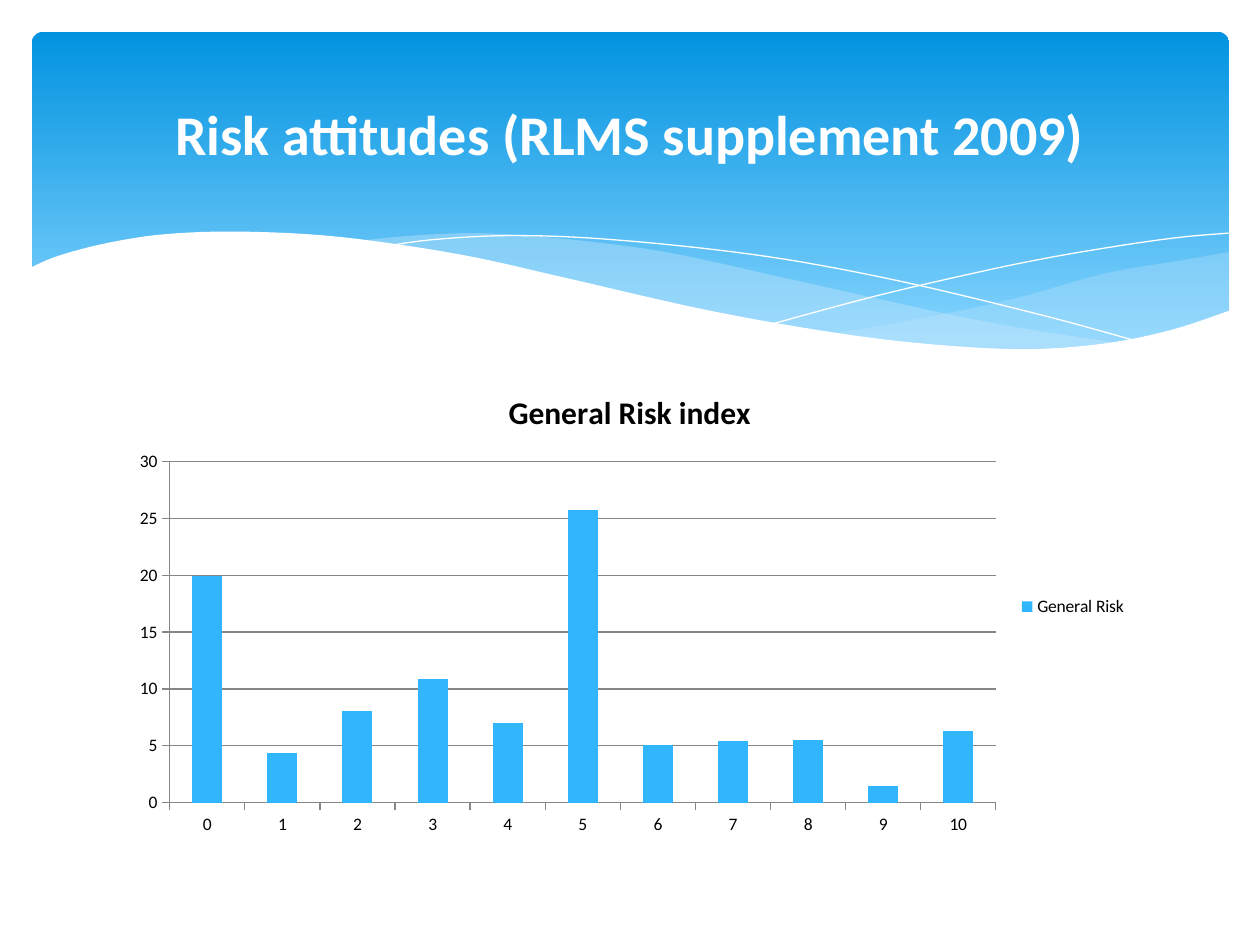
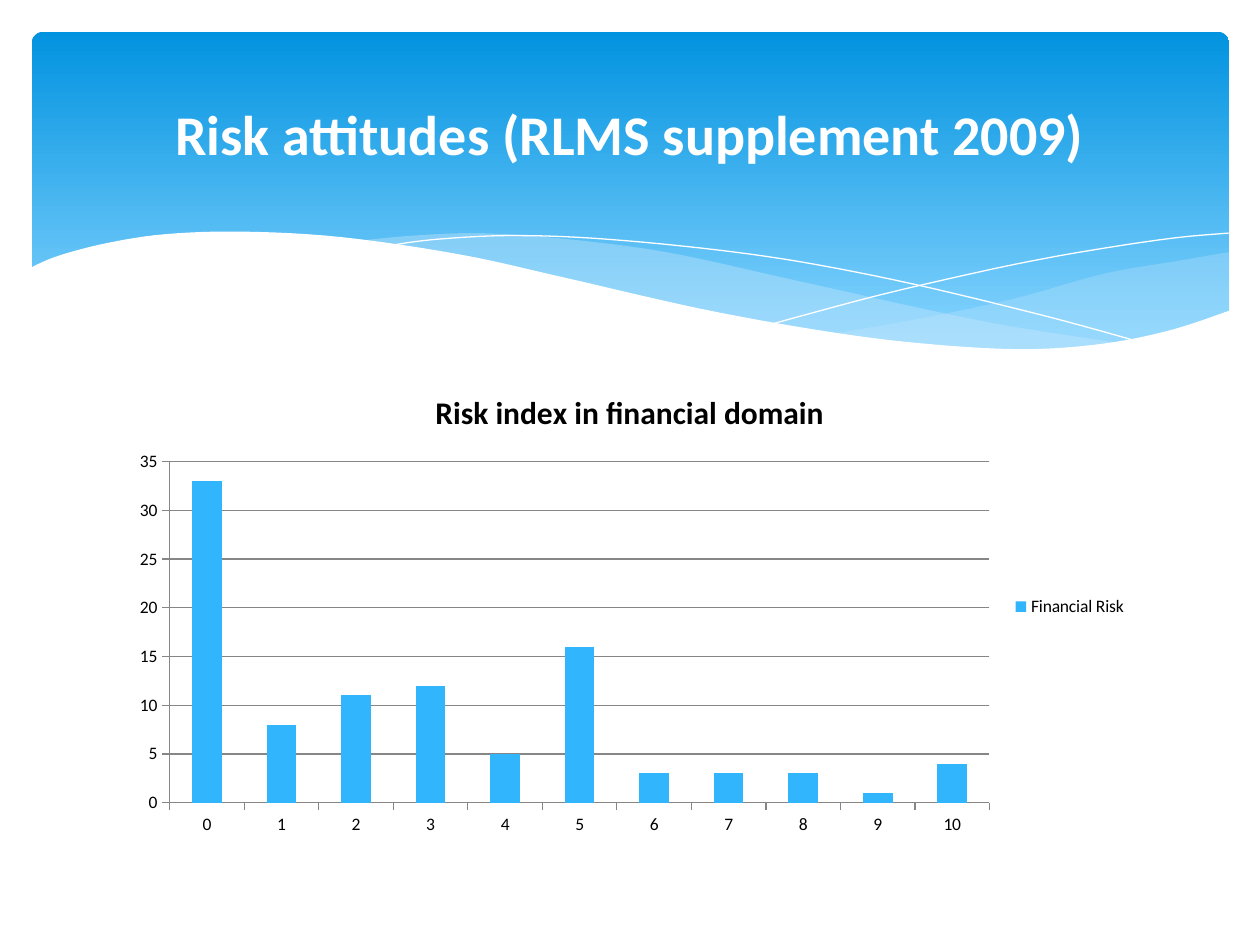
from dataclasses import dataclass

from lxml.etree import SubElement
from pptx import Presentation
from pptx.chart.data import CategoryChartData
from pptx.dml.color import RGBColor as Rgb
from pptx.enum.chart import XL_CHART_TYPE as ChartType
from pptx.enum.chart import XL_LEGEND_POSITION as LegendSide
from pptx.enum.chart import XL_TICK_MARK as Tick
from pptx.enum.shapes import MSO_SHAPE as Preset
from pptx.enum.text import MSO_ANCHOR as Anchor
from pptx.enum.text import PP_ALIGN as Align
from pptx.oxml.ns import qn
from pptx.util import Cm, Pt


@dataclass(frozen=True)
class Theme:
    font: str = "Calibri"
    white: Rgb = Rgb(0xFF, 0xFF, 0xFF)
    black: Rgb = Rgb(0, 0, 0)
    sky_deep: Rgb = Rgb(0x02, 0x93, 0xE0)
    sky_light: Rgb = Rgb(0x83, 0xD3, 0xFE)
    mist: Rgb = Rgb(0xC6, 0xE7, 0xFC)
    bar: Rgb = Rgb(0x31, 0xB6, 0xFD)
    axis: Rgb = Rgb(0x86, 0x86, 0x86)
    title_size: Pt = Pt(32)
    chart_title_size: Pt = Pt(18)
    label_size: Pt = Pt(10)


@dataclass(frozen=True)
class Box:
    left: float
    top: float
    width: float
    height: float

    def lengths(self):
        return Cm(self.left), Cm(self.top), Cm(self.width), Cm(self.height)


THEME = Theme()
BANNER = Box(0.64, 0.64, 24.14, 6.86)
TITLE = Box(1.27, 0.94, 22.86, 3.48)
CHART = Box(2.41, 7.44, 20.57, 9.58)

RIGHT_SWELL_TOP = [(16.15, 6.09), (17.88, 5.79), (19.81, 5.38), (21.61, 4.88),
                   (23.11, 4.62), (24.15, 4.44)]
RIGHT_SWELL_BASE = [(24.15, 5.63), (22.93, 6.04), (21.74, 6.29), (19.76, 6.42),
                    (17.95, 6.32), (16.15, 6.09)]
MIDDLE_SWELL_TOP = [(6.62, 4.21), (7.69, 4.11), (9.01, 4.06), (10.59, 4.16),
                    (12.77, 4.44), (15.34, 5), (18.18, 5.63), (19.86, 5.96),
                    (22.04, 6.29)]
MIDDLE_SWELL_BASE = [(22.04, 6.29), (20.65, 6.42), (18.99, 6.4), (17.01, 6.22),
                     (14.63, 5.84), (11.83, 5.25), (9.62, 4.72), (8.05, 4.41),
                     (6.62, 4.21)]
FALLING_THREAD = [(7.21, 4.31), (8.1, 4.19), (9.55, 4.11), (11.27, 4.16),
                  (13.48, 4.36), (15.51, 4.64), (17.83, 5.1), (20.47, 5.74),
                  (22.4, 6.27)]
RISING_THREAD = [(14.93, 5.89), (17.01, 5.33), (19.07, 4.85), (20.59, 4.54),
                 (22.09, 4.29), (23.19, 4.14), (24.13, 4.06)]
WAVE_EDGE = [(-0.05, 4.77), (0.53, 4.52), (1.52, 4.26), (2.71, 4.08),
             (4.26, 4.03), (6.24, 4.14), (8.63, 4.49), (10.71, 4.95),
             (13.46, 5.58), (15.82, 6.01), (17.8, 6.27), (19.91, 6.4),
             (21.59, 6.29), (22.98, 6.01), (24.18, 5.61)]
WAVE_FLOOR = [(24.18, 7.72), (-0.05, 7.72)]

LEVELS = [str(level) for level in range(11)]
SLIDE_TITLE = "Risk attitudes (RLMS supplement 2009)"
RISK_INDEXES = [
    ("General Risk index", "General Risk",
     [19.9, 4.4, 8.1, 10.9, 7, 25.7, 5.1, 5.4, 5.5, 1.5, 6.3]),
    ("Risk index in financial domain", "Financial Risk",
     [33, 8, 11, 12, 5, 16, 3, 3, 3, 1, 4]),
]


def smooth(knots, steps=6):
    padded = [knots[0], *knots, knots[-1]]
    curve = [knots[0]]
    for before, start, end, after in zip(padded, padded[1:], padded[2:], padded[3:]):
        for step in range(1, steps + 1):
            t = step / steps
            curve.append(tuple(
                (2 * b + (c - a) * t + (2 * a - 5 * b + 4 * c - d) * t ** 2
                 + (3 * b - a - 3 * c + d) * t ** 3) / 2
                for a, b, c, d in zip(before, start, end, after)))
    return curve


def draw_outline(shapes, box, points, closed):
    start, *rest = [(Cm(x), Cm(y)) for x, y in points]
    builder = shapes.build_freeform(*start)
    builder.add_line_segments(rest, close=closed)
    outline = builder.convert_to_shape(Cm(box.left), Cm(box.top))
    outline.shadow.inherit = False
    return outline


def draw_swell(shapes, box, points, color, opacity=100):
    swell = draw_outline(shapes, box, points, True)
    swell.fill.solid()
    swell.fill.fore_color.rgb = color
    swell.line.fill.background()
    if opacity < 100:
        tint = swell.element.spPr.find(qn("a:solidFill"))[0]
        SubElement(tint, qn("a:alpha")).set("val", str(opacity * 1000))


def draw_thread(shapes, box, knots):
    thread = draw_outline(shapes, box, smooth(knots), False)
    thread.fill.background()
    thread.line.color.rgb = THEME.white
    thread.line.width = 0


def draw_sky(shapes, box):
    sky = shapes.add_shape(Preset.ROUNDED_RECTANGLE, *box.lengths())
    sky.adjustments[0] = 0.034
    sky.shadow.inherit = False
    sky.line.fill.background()
    sky.fill.gradient()
    sky.fill.gradient_angle = 270
    shades = [(0, THEME.sky_deep), (0.9, THEME.sky_light)]
    for stop, (position, color) in zip(sky.fill.gradient_stops, shades):
        stop.position = position
        stop.color.rgb = color


def draw_banner(slide, box):
    banner = slide.shapes.add_group_shape()
    parts = banner.shapes
    draw_sky(parts, box)
    draw_swell(parts, box, smooth(RIGHT_SWELL_TOP) + smooth(RIGHT_SWELL_BASE),
               THEME.mist, 29)
    draw_swell(parts, box, smooth(MIDDLE_SWELL_TOP) + smooth(MIDDLE_SWELL_BASE),
               THEME.mist, 40)
    for knots in (FALLING_THREAD, RISING_THREAD):
        draw_thread(parts, box, knots)
    draw_swell(parts, box, smooth(WAVE_EDGE) + WAVE_FLOOR, THEME.white)
    return banner


def share_on_layout(banner, layout):
    layout.shapes.element.insert(2, banner.element)


def style_font(font, size, color, bold=False):
    font.name = THEME.font
    font.size = size
    font.bold = bold
    font.color.rgb = color


def write_title(slide, box, wording):
    title = slide.shapes.title
    title.left, title.top, title.width, title.height = box.lengths()
    frame = title.text_frame
    frame.vertical_anchor = Anchor.MIDDLE
    paragraph = frame.paragraphs[0]
    paragraph.alignment = Align.CENTER
    run = paragraph.add_run()
    run.text = wording
    style_font(run.font, THEME.title_size, THEME.white, True)


def style_axis(axis, gridlines):
    axis.major_tick_mark = Tick.OUTSIDE
    axis.minor_tick_mark = Tick.NONE
    axis.format.line.color.rgb = THEME.axis
    axis.has_major_gridlines = gridlines
    if gridlines:
        axis.major_gridlines.format.line.color.rgb = THEME.axis


def draw_risk_chart(slide, box, heading, measure, shares):
    data = CategoryChartData()
    data.categories = LEVELS
    data.add_series(measure, shares)
    chart = slide.shapes.add_chart(
        ChartType.COLUMN_CLUSTERED, *box.lengths(), data).chart
    style_font(chart.font, THEME.label_size, THEME.black)

    chart.has_title = True
    run = chart.chart_title.text_frame.paragraphs[0].add_run()
    run.text = heading
    style_font(run.font, THEME.chart_title_size, THEME.black, True)

    chart.has_legend = True
    chart.legend.position = LegendSide.RIGHT
    chart.legend.include_in_layout = False

    style_axis(chart.category_axis, False)
    style_axis(chart.value_axis, True)

    plot = chart.plots[0]
    plot.gap_width = 150
    plot.vary_by_categories = False
    columns = plot.series[0].format.fill
    columns.solid()
    columns.fore_color.rgb = THEME.bar


def add_risk_slide(deck, layout, heading, measure, shares):
    slide = deck.slides.add_slide(layout)
    draw_risk_chart(slide, CHART, heading, measure, shares)
    write_title(slide, TITLE, SLIDE_TITLE)
    return slide


def main():
    deck = Presentation()
    deck.slide_width, deck.slide_height = Cm(25.4), Cm(19.05)
    layout = deck.slide_layouts[5]
    slides = [add_risk_slide(deck, layout, *index) for index in RISK_INDEXES]
    share_on_layout(draw_banner(slides[0], BANNER), layout)
    deck.save("out.pptx")


if __name__ == "__main__":
    main()
